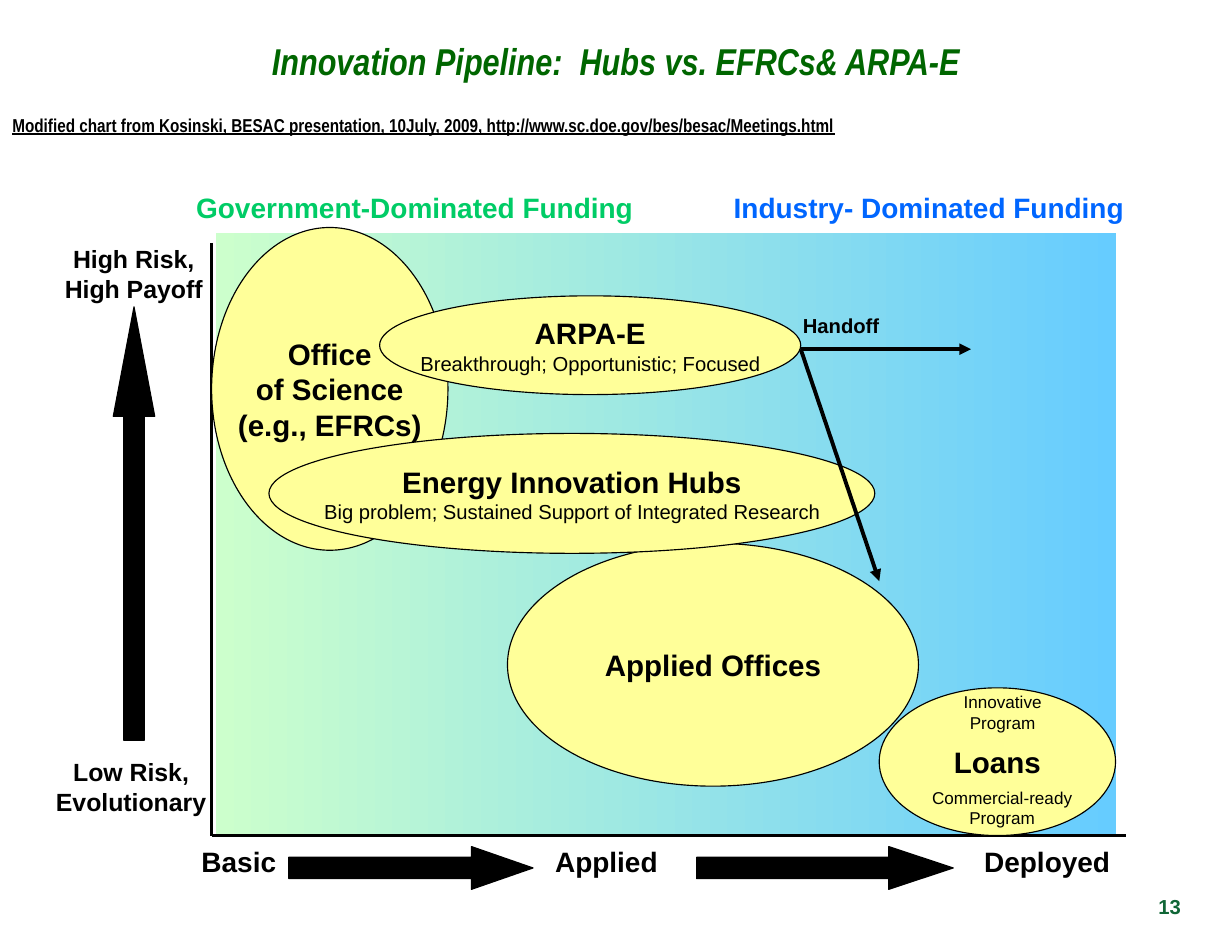
import pptx
import pptx.util
import pptx.dml.color
import pptx.enum.shapes
import pptx.enum.text
from lxml import etree

Cm, Pt = pptx.util.Cm, pptx.util.Pt
SHAPE = pptx.enum.shapes.MSO_SHAPE
ALIGN = pptx.enum.text.PP_ALIGN
ANCHOR = pptx.enum.text.MSO_ANCHOR
rgb = pptx.dml.color.RGBColor.from_string
BLACK, PALE_YELLOW = "000000", "FFFF99"


def write(frame, lines, color=BLACK, align=ALIGN.CENTER, anchor=ANCHOR.TOP,
          wrap=False, font="Arial"):
    """Fill a text frame with lines of (text, size, bold)."""
    frame.word_wrap = wrap
    frame.auto_size = pptx.enum.text.MSO_AUTO_SIZE.NONE
    frame.vertical_anchor = anchor
    frame.margin_left = frame.margin_right = Cm(0.28)
    frame.margin_top = frame.margin_bottom = Cm(0.15)
    for i, (text, size, bold) in enumerate(lines):
        paragraph = frame.add_paragraph() if i else frame.paragraphs[0]
        paragraph.text = text
        paragraph.alignment = align
        paragraph.font.name = font
        paragraph.font.size = Pt(size)
        paragraph.font.bold = bold
        paragraph.font.color.rgb = rgb(color)


def draw_line(start, end, width, arrow=False):
    line = slide.shapes.add_connector(
        pptx.enum.shapes.MSO_CONNECTOR.STRAIGHT, *map(Cm, start + end))
    line.line.color.rgb = rgb(BLACK)
    line.line.width = Pt(width)
    if arrow:
        ln = line.line._get_or_add_ln()
        etree.SubElement(ln, pptx.oxml.ns.qn("a:tailEnd"), type="triangle")
    etree.SubElement(line._element.spPr, pptx.oxml.ns.qn("a:effectLst"))


prs = pptx.Presentation()
prs.slide_width, prs.slide_height = Cm(27.94), Cm(21.59)
slide = prs.slides.add_slide(prs.slide_layouts[5])

title = slide.shapes.title
title.left, title.top, title.width, title.height = map(Cm, (0, 0.23, 27.94, 2.29))
write(title.text_frame, [("Innovation Pipeline:  Hubs vs. EFRCs& ARPA-E", 24, True)],
      "006600", anchor=ANCHOR.MIDDLE, wrap=True, font="Arial Narrow")
title.text_frame.paragraphs[0].font.italic = True

# Funding panel and axes
panel = slide.shapes.add_shape(SHAPE.RECTANGLE, *map(Cm, (4.9, 5.28, 20.4, 13.67)))
panel.shadow.inherit = False
panel.line.fill.background()
panel.fill.gradient()
panel.fill.gradient_angle = 0
for stop, color in zip(panel.fill.gradient_stops, ("CCFFCC", "66CCFF")):
    stop.color.rgb = rgb(color)
origin = (4.8, 18.95)
draw_line((4.8, 5.51), origin, 2)
draw_line(origin, (25.53, 18.95), 2)

# Programs, from back to front
programs = [
    ((4.8, 5.16, 5.36, 7.32),
     [("Office", 19, True), ("of Science", 19, True), ("(e.g., EFRCs)", 19, True)]),
    ((8.61, 6.71, 9.55, 2.24),
     [("ARPA-E", 19, True), ("Breakthrough; Opportunistic; Focused", 13, False)]),
    ((19.94, 15.6, 5.36, 3.35), [("Loans", 19, True)]),
    ((11.51, 12.32, 9.32, 5.51), [("Applied Offices", 19, True)]),
    ((6.1, 9.83, 13.74, 2.72),
     [("Energy Innovation Hubs", 19, True),
      ("Big problem; Sustained Support of Integrated Research", 13, False)]),
]
for box, lines in programs:
    program = slide.shapes.add_shape(SHAPE.OVAL, *map(Cm, box))
    program.shadow.inherit = False
    program.fill.solid()
    program.fill.fore_color.rgb = rgb(PALE_YELLOW)
    program.line.color.rgb = rgb(BLACK)
    program.line.width = Pt(0.75)
    write(program.text_frame, lines, anchor=ANCHOR.MIDDLE)

# Block arrows along the axes
for kind, box, head in [
    (SHAPE.RIGHT_ARROW, (6.55, 19.2, 5.54, 0.97), 1.44),
    (SHAPE.RIGHT_ARROW, (15.8, 19.2, 5.82, 0.97), 1.51),
    (SHAPE.UP_ARROW, (2.57, 6.96, 0.94, 9.83), 2.64),
]:
    direction = slide.shapes.add_shape(kind, *map(Cm, box))
    direction.shadow.inherit = False
    direction.adjustments[1] = head
    direction.fill.solid()
    direction.fill.fore_color.rgb = rgb(BLACK)
    direction.line.color.rgb = rgb(BLACK)
    direction.line.width = Pt(0.75)

# Handoff from ARPA-E
handoff = (18.16, 7.92)
draw_line(handoff, (22.02, 7.92), 2.5, arrow=True)
draw_line(handoff, (19.94, 13.18), 2.5, arrow=True)

# Centred labels
for box, texts, size, bold in [
    ((1.17, 5.38, 3.73, 1.65), ("High Risk,", "High Payoff"), 16, True),
    ((0.97, 17.02, 4.01, 1.65), ("Low Risk,", "Evolutionary"), 16, True),
    ((21.56, 15.54, 2.36, 1.22), ("Innovative", "Program"), 11, False),
    ((20.85, 17.7, 3.76, 1.22), ("Commercial-ready", "Program"), 11, False),
]:
    label = slide.shapes.add_textbox(*map(Cm, box))
    write(label.text_frame, [(text, size, bold) for text in texts])

# Single-line labels
for box, text, size, color, align in [
    ((4.17, 4.17, 12.29, 1.07), "Government-Dominated Funding", 18, "00CC66", ALIGN.LEFT),
    ((16.36, 4.17, 11.5, 1.07), "Industry- Dominated Funding", 18, "0066FF", ALIGN.LEFT),
    ((17.93, 6.96, 3.25, 0.86), "Handoff", 13, BLACK, ALIGN.LEFT),
    ((25.7, 19.99, 1.36, 1.14), "13", 13, "106636", ALIGN.RIGHT),
]:
    label = slide.shapes.add_textbox(*map(Cm, box))
    write(label.text_frame, [(text, size, True)], color, align, wrap=True,
          anchor=ANCHOR.MIDDLE if text == "13" else ANCHOR.TOP)

# Stages under the horizontal axis, set on tab stops
stages = slide.shapes.add_textbox(*map(Cm, (4.29, 19, 22.81, 1.07)))
properties = stages.text_frame.paragraphs[0]._p.get_or_add_pPr()
tabs = etree.SubElement(properties, pptx.oxml.ns.qn("a:tabLst"))
for position in (8.02, 17.75):
    etree.SubElement(tabs, pptx.oxml.ns.qn("a:tab"), pos=str(Cm(position)), algn="l")
write(stages.text_frame, [("Basic\tApplied\tDeployed", 18, True)],
      align=ALIGN.LEFT, wrap=True)

source = slide.shapes.add_textbox(*map(Cm, (0, 2.44, 19.28, 0.76)))
write(source.text_frame,
      [("Modified chart from Kosinski, BESAC presentation, 10July, 2009, "
        "http://www.sc.doe.gov/bes/besac/Meetings.html", 12, True)],
      align=ALIGN.LEFT, font="Arial Narrow")
source.text_frame.paragraphs[0].font.underline = True

prs.save("out.pptx")
